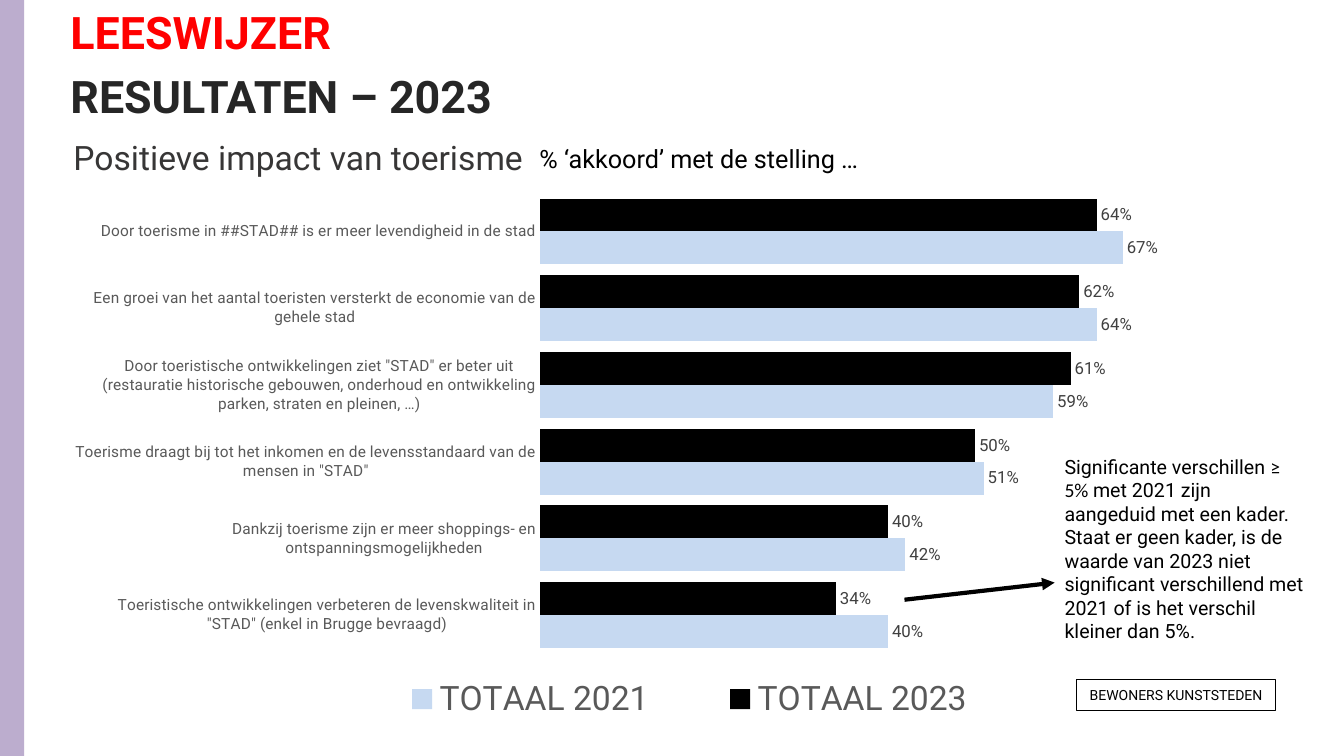
import dataclasses

import pptx
import pptx.chart.data
import pptx.dml.color
import pptx.enum.chart
import pptx.enum.shapes
import pptx.enum.text
import pptx.oxml
import pptx.oxml.ns
import pptx.util


@dataclasses.dataclass(frozen=True)
class Theme:
    font: str = "Roboto"
    symbol_font: str = "Calibri"
    black: str = "000000"
    white: str = "FFFFFF"
    lilac: str = "BCADCE"
    red: str = "FF0000"
    title: str = "262626"
    subtitle: str = "373636"
    axis: str = "595959"
    value: str = "404040"
    light_blue: str = "C6D9F1"
    title_size: int = 32
    subtitle_size: int = 24
    legend_size: int = 24
    statement_size: int = 18
    note_size: int = 14
    value_size: int = 12
    axis_size: int = 11
    badge_size: int = 10


def rgb(color):
    return pptx.dml.color.RGBColor.from_string(color)


def manual_layout(x, y, width, height, inner=False):
    settings = [("xMode", "edge"), ("yMode", "edge"), ("x", x), ("y", y), ("w", width), ("h", height)]
    if inner:
        settings.insert(0, ("layoutTarget", "inner"))
    children = "".join(f'<c:{name} val="{value}"/>' for name, value in settings)
    return pptx.oxml.parse_xml(
        f'<c:layout {pptx.oxml.ns.nsdecls("c")}><c:manualLayout>{children}</c:manualLayout></c:layout>'
    )


class SlideBuilder:
    def __init__(self, presentation, theme):
        self.theme = theme
        self.width = presentation.slide_width
        self.height = presentation.slide_height
        self.slide = presentation.slides.add_slide(presentation.slide_layouts[6])

    def point(self, x, y):
        return int(self.width * x / 100), int(self.height * y / 100)

    def area(self, left, top, width, height):
        return *self.point(left, top), *self.point(width, height)

    def style(self, font, size, color, bold=False):
        font.name = self.theme.font
        font.size = pptx.util.Pt(size)
        font.color.rgb = rgb(color)
        font.bold = bold

    def fill_text(self, frame, runs, size, color, bold=False, middle=False, centered=False):
        anchors = pptx.enum.text.MSO_ANCHOR
        aligns = pptx.enum.text.PP_ALIGN
        frame.word_wrap = True
        frame.vertical_anchor = anchors.MIDDLE if middle else anchors.TOP
        paragraph = frame.paragraphs[0]
        paragraph.alignment = aligns.CENTER if centered else aligns.LEFT
        self.style(paragraph.font, size, color, bold)
        for words, font_name in runs:
            run = paragraph.add_run()
            run.text = words
            run.font.name = font_name

    def text(self, area, words, size, color, bold=False, middle=False):
        box = self.slide.shapes.add_textbox(*self.area(*area))
        self.fill_text(box.text_frame, [(words, self.theme.font)], size, color, bold, middle)

    def panel(self, area, fill=None, outline=None):
        panel = self.slide.shapes.add_shape(
            pptx.enum.shapes.MSO_SHAPE.RECTANGLE, *self.area(*area)
        )
        panel.shadow.inherit = False
        if fill:
            panel.fill.solid()
            panel.fill.fore_color.rgb = rgb(fill)
        else:
            panel.fill.background()
        if outline:
            panel.line.color.rgb = rgb(outline)
            panel.line.width = pptx.util.Pt(1)
        else:
            panel.line.fill.background()
        return panel.text_frame

    def arrow(self, start, end, color, weight):
        arrow = self.slide.shapes.add_connector(
            pptx.enum.shapes.MSO_CONNECTOR.STRAIGHT, *self.point(*start), *self.point(*end)
        )
        arrow.line.color.rgb = rgb(color)
        arrow.line.width = pptx.util.Pt(weight)
        namespace = pptx.oxml.ns.nsdecls("a")
        arrow.line._get_or_add_ln().append(
            pptx.oxml.parse_xml(f'<a:tailEnd {namespace} type="triangle"/>')
        )
        arrow._element.spPr.append(pptx.oxml.parse_xml(f"<a:effectLst {namespace}/>"))

    def bar_chart(self, area, statements, series_values, colors):
        theme = self.theme
        chart_data = pptx.chart.data.CategoryChartData(number_format="0%")
        chart_data.categories = statements
        for year, shares in series_values.items():
            chart_data.add_series(year, shares)
        chart = self.slide.shapes.add_chart(
            pptx.enum.chart.XL_CHART_TYPE.BAR_CLUSTERED, *self.area(*area), chart_data
        ).chart
        self.style(chart.font, theme.badge_size, theme.black)
        chart.has_title = False

        statement_axis = chart.category_axis
        statement_axis.reverse_order = True
        statement_axis.major_tick_mark = pptx.enum.chart.XL_TICK_MARK.NONE
        statement_axis.format.line.fill.background()
        self.style(statement_axis.tick_labels.font, theme.axis_size, theme.axis)

        share_axis = chart.value_axis
        share_axis.minimum_scale = 0
        share_axis.maximum_scale = 0.8
        share_axis.has_major_gridlines = False
        share_axis.visible = False

        bars = chart.plots[0]
        bars.gap_width = 33
        bars.overlap = 0
        bars.vary_by_categories = False
        for series, color in zip(bars.series, colors):
            series.format.fill.solid()
            series.format.fill.fore_color.rgb = rgb(color)
            labels = series.data_labels
            labels.show_value = True
            labels.number_format = "0%"
            labels.number_format_is_linked = False
            labels.position = pptx.enum.chart.XL_LABEL_POSITION.OUTSIDE_END
            self.style(labels.font, theme.value_size, theme.value)

        chart.has_legend = True
        legend = chart.legend
        legend.position = pptx.enum.chart.XL_LEGEND_POSITION.RIGHT
        legend.include_layout = False
        self.style(legend.font, theme.legend_size, theme.axis)
        legend._element.find(pptx.oxml.ns.qn("c:legendPos")).addnext(
            manual_layout(0.22, 0.85, 0.56, 0.1)
        )
        plot_area = chart._chartSpace.chart.plotArea
        for layout in plot_area.findall(pptx.oxml.ns.qn("c:layout")):
            plot_area.remove(layout)
        plot_area.insert(0, manual_layout(0.38, 0.01, 0.56, 0.81, inner=True))


def main():
    presentation = pptx.Presentation()
    presentation.slide_width = pptx.util.Inches(13.33)
    presentation.slide_height = pptx.util.Inches(7.5)
    theme = Theme()
    page = SlideBuilder(presentation, theme)

    page.panel((0, 0, 1.8, 100), fill=theme.lilac)
    page.bar_chart(
        (5.1, 24.8, 92.4, 75.2),
        [
            "Door toerisme in ##STAD## is er meer levendigheid in de stad",
            "Een groei van het aantal toeristen versterkt de economie van de gehele stad",
            'Door toeristische ontwikkelingen ziet "STAD" er beter uit (restauratie historische '
            "gebouwen, onderhoud en ontwikkeling parken, straten en pleinen, …)",
            'Toerisme draagt bij tot het inkomen en de levensstandaard van de mensen in "STAD"',
            "Dankzij toerisme zijn er meer shoppings- en ontspanningsmogelijkheden",
            'Toeristische ontwikkelingen verbeteren de levenskwaliteit in "STAD" (enkel in Brugge bevraagd)',
        ],
        {
            "TOTAAL 2023": [0.64, 0.62, 0.61, 0.5, 0.4, 0.34],
            "TOTAAL 2021": [0.67, 0.64, 0.59, 0.51, 0.42, 0.4],
        },
        [theme.black, theme.light_blue],
    )
    for area, words, color in (
        ((4.5, 0, 40.4, 8.4), "LEESWIJZER", theme.red),
        ((4.5, 4.27, 71.3, 16.67), "RESULTATEN – 2023", theme.title),
    ):
        page.text(area, words, theme.title_size, color, bold=True, middle=True)
    page.text((4.73, 17.4, 90.8, 13.8), "Positieve impact van toerisme", theme.subtitle_size, theme.subtitle)
    page.text((39.4, 18.27, 50, 5.33), "% ‘akkoord’ met de stelling …", theme.statement_size, theme.black)

    badge = page.panel((80.1, 89.87, 14.8, 4.13), outline=theme.black)
    page.fill_text(badge, [("BEWONERS KUNSTSTEDEN", theme.font)], theme.badge_size, theme.black, middle=True, centered=True)

    note = page.panel((78.47, 57.33, 19.5, 30.53), fill=theme.white)
    page.fill_text(
        note,
        [
            ("Significante verschillen ", theme.font),
            ("≥ 5% ", theme.symbol_font),
            (
                "met 2021 zijn aangeduid met een kader. Staat er geen kader, is de waarde van 2023 "
                "niet significant verschillend met 2021 of is het verschil kleiner dan 5%.",
                theme.font,
            ),
        ],
        theme.note_size,
        theme.black,
        middle=True,
    )
    page.arrow((67.3, 79.33), (78.47, 77.07), theme.black, 3)
    presentation.save("out.pptx")


if __name__ == "__main__":
    main()
